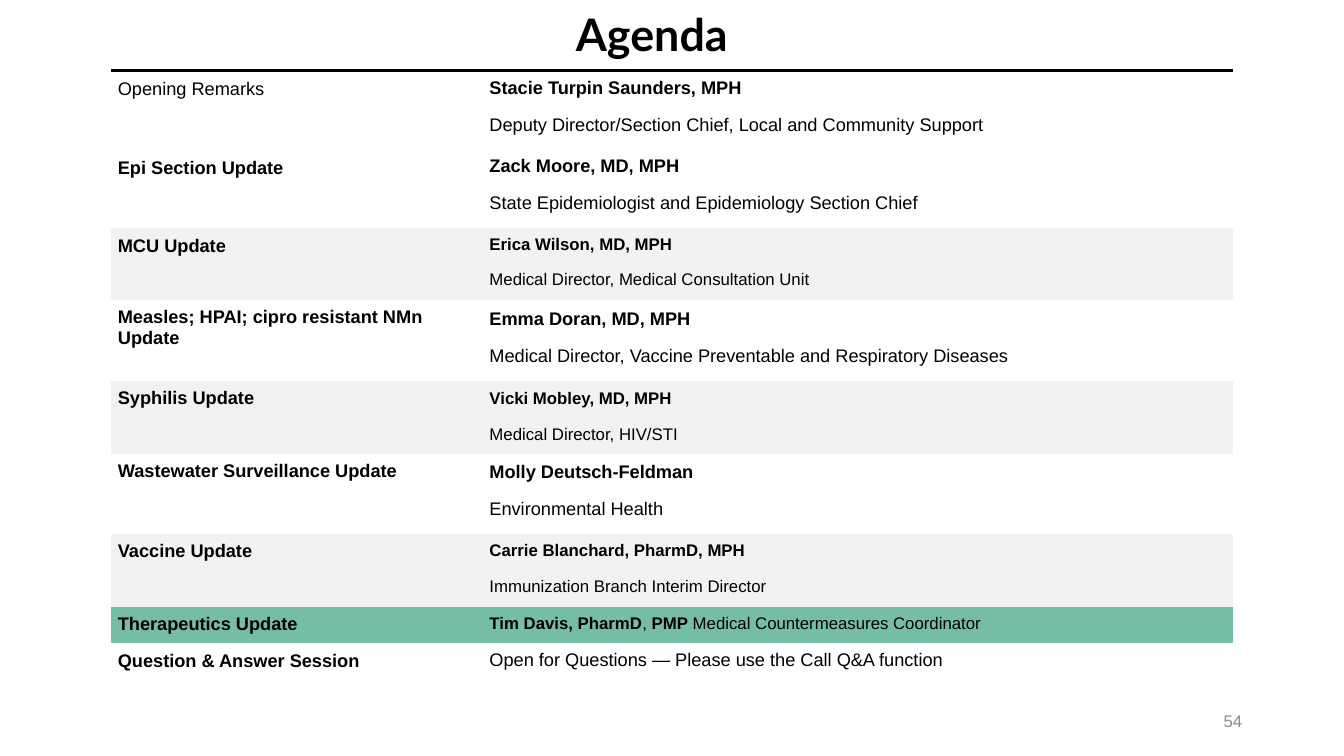
from dataclasses import dataclass

from lxml.etree import SubElement
from pptx import Presentation
from pptx.dml.color import RGBColor
from pptx.enum.text import MSO_ANCHOR, PP_ALIGN
from pptx.oxml import parse_xml
from pptx.oxml.ns import nsdecls, qn
from pptx.util import Inches, Pt

COLORS = {"text": "000000", "number": "8C8C8C", "band": "F2F2F2", "current": "75BDA7"}
NO_STYLE = "{2D5ABB26-0587-4C30-8999-92F81FD0307C}"
WIDTH, HEIGHT = Inches(13.33), Inches(7.5)
COLUMN, ROW = WIDTH / 100, HEIGHT / 75  # grid of 100 columns by 75 rows
TOPIC_COLUMNS, SPEAKER_COLUMNS = 27.65, 55.85
INSET = Inches(0.07)


@dataclass(frozen=True)
class Span:
    text: str
    bold: bool = False


@dataclass(frozen=True)
class Line:
    spans: tuple[Span, ...]
    spacing: float = 1.0


@dataclass(frozen=True)
class AgendaItem:
    topic: Line
    details: tuple[Line, ...]
    rows: float
    fill: str = ""


def line(text: str, bold: bool = False, spacing: float = 1.0) -> Line:
    return Line((Span(text, bold),), spacing)


def speaker(name: str, role: str, spacing: float = 1.0) -> tuple[Line, ...]:
    return line(name, True, spacing), line(role)


AGENDA = (
    AgendaItem(line("Opening Remarks", spacing=1.07),
               speaker("Stacie Turpin Saunders, MPH",
                       "Deputy Director/Section Chief, Local and Community Support"), 7.8),
    AgendaItem(line("Epi Section Update", True, 1.07),
               speaker("Zack Moore, MD, MPH",
                       "State Epidemiologist and Epidemiology Section Chief"), 7.8),
    AgendaItem(line("MCU Update", True, 1.07),
               speaker("Erica Wilson, MD, MPH",
                       "Medical Director, Medical Consultation Unit"), 7.2, "band"),
    AgendaItem(line("Measles; HPAI; cipro resistant NMn Update", True),
               speaker("Emma Doran, MD, MPH",
                       "Medical Director, Vaccine Preventable and Respiratory Diseases", 1.07), 8),
    AgendaItem(line("Syphilis Update", True),
               speaker("Vicki Mobley, MD, MPH", "Medical Director, HIV/STI", 1.07), 6.8, "band"),
    AgendaItem(line("Wastewater Surveillance Update", True),
               speaker("Molly Deutsch-Feldman", "Environmental Health", 1.07), 8),
    AgendaItem(line("Vaccine Update", True),
               speaker("Carrie Blanchard, PharmD, MPH",
                       "Immunization Branch Interim Director"), 7.2, "band"),
    AgendaItem(line("Therapeutics Update", True),
               (Line((Span("Tim Davis, PharmD", True), Span(", "), Span("PMP", True),
                      Span(" Medical Countermeasures Coordinator"))),), 3.4, "current"),
    AgendaItem(line("Question & Answer Session", True, 1.07),
               (line("Open for Questions — Please use the Call Q&A function"),), 4),
)


def grid(left: float, top: float, width: float, height: float) -> tuple[int, ...]:
    return int(left * COLUMN), int(top * ROW), int(width * COLUMN), int(height * ROW)


def set_font(paragraph, name: str, size: float, color: str) -> None:
    paragraph.font.name = name
    paragraph.font.size = Pt(size)
    paragraph.font.color.rgb = RGBColor.from_string(COLORS[color])


def fill_cell(cell, lines: tuple[Line, ...], size: float, fill: str) -> None:
    cell.margin_left = cell.margin_right = cell.margin_top = cell.margin_bottom = INSET
    if fill:
        cell.fill.solid()
        cell.fill.fore_color.rgb = RGBColor.from_string(COLORS[fill])
    else:
        cell.fill.background()
    for index, content in enumerate(lines):
        frame = cell.text_frame
        paragraph = frame.add_paragraph() if index else frame.paragraphs[0]
        paragraph.space_before = Pt(6 if index else 0)
        paragraph.space_after = Pt(6)
        paragraph.line_spacing = content.spacing
        set_font(paragraph, "Arial", size, "text")
        for span in content.spans:
            run = paragraph.add_run()
            run.text = span.text
            run.font.bold = span.bold


def add_top_border(cell) -> None:
    border = parse_xml(f'<a:lnT {nsdecls("a")} w="{Pt(2.25)}"/>')
    fill = SubElement(border, qn("a:solidFill"))
    SubElement(fill, qn("a:srgbClr"), val=COLORS["text"])
    cell._tc.get_or_add_tcPr().insert(0, border)


def add_agenda(slide) -> None:
    area = grid(8.25, 7, TOPIC_COLUMNS + SPEAKER_COLUMNS, sum(item.rows for item in AGENDA))
    table = slide.shapes.add_table(len(AGENDA), 2, *area).table
    table.first_row = table.horz_banding = False
    table._tbl.tblPr.find(qn("a:tableStyleId")).text = NO_STYLE
    for column, share in zip(table.columns, (TOPIC_COLUMNS, SPEAKER_COLUMNS)):
        column.width = int(share * COLUMN)
    for index, item in enumerate(AGENDA):
        table.rows[index].height = int(item.rows * ROW)
        fill_cell(table.cell(index, 0), (item.topic,), 13, item.fill)
        fill_cell(table.cell(index, 1), item.details, 12 if item.fill else 13, item.fill)
    for column in range(2):
        add_top_border(table.cell(0, column))


def add_title(slide) -> None:
    title = slide.shapes.title
    title.left, title.top, title.width, title.height = grid(42.1, 0.2, 36.3, 6.4)
    title.text_frame.text = "Agenda"
    title.text_frame.vertical_anchor = MSO_ANCHOR.TOP
    paragraph = title.text_frame.paragraphs[0]
    paragraph.alignment = PP_ALIGN.LEFT
    set_font(paragraph, "Lato", 32, "text")
    paragraph.font.bold = True


def add_page_number(slide) -> None:
    frame = slide.shapes.add_textbox(*grid(70.67, 69.5, 22.5, 4)).text_frame
    frame.word_wrap = True
    frame.vertical_anchor = MSO_ANCHOR.MIDDLE
    paragraph = frame.paragraphs[0]
    paragraph.text = "54"
    paragraph.alignment = PP_ALIGN.RIGHT
    paragraph.space_after = Pt(6)
    set_font(paragraph, "Arial", 12, "number")


def main() -> None:
    presentation = Presentation()
    presentation.slide_width, presentation.slide_height = WIDTH, HEIGHT
    slide = presentation.slides.add_slide(presentation.slide_layouts[5])
    add_page_number(slide)
    add_agenda(slide)
    add_title(slide)
    presentation.save("out.pptx")


if __name__ == "__main__":
    main()
